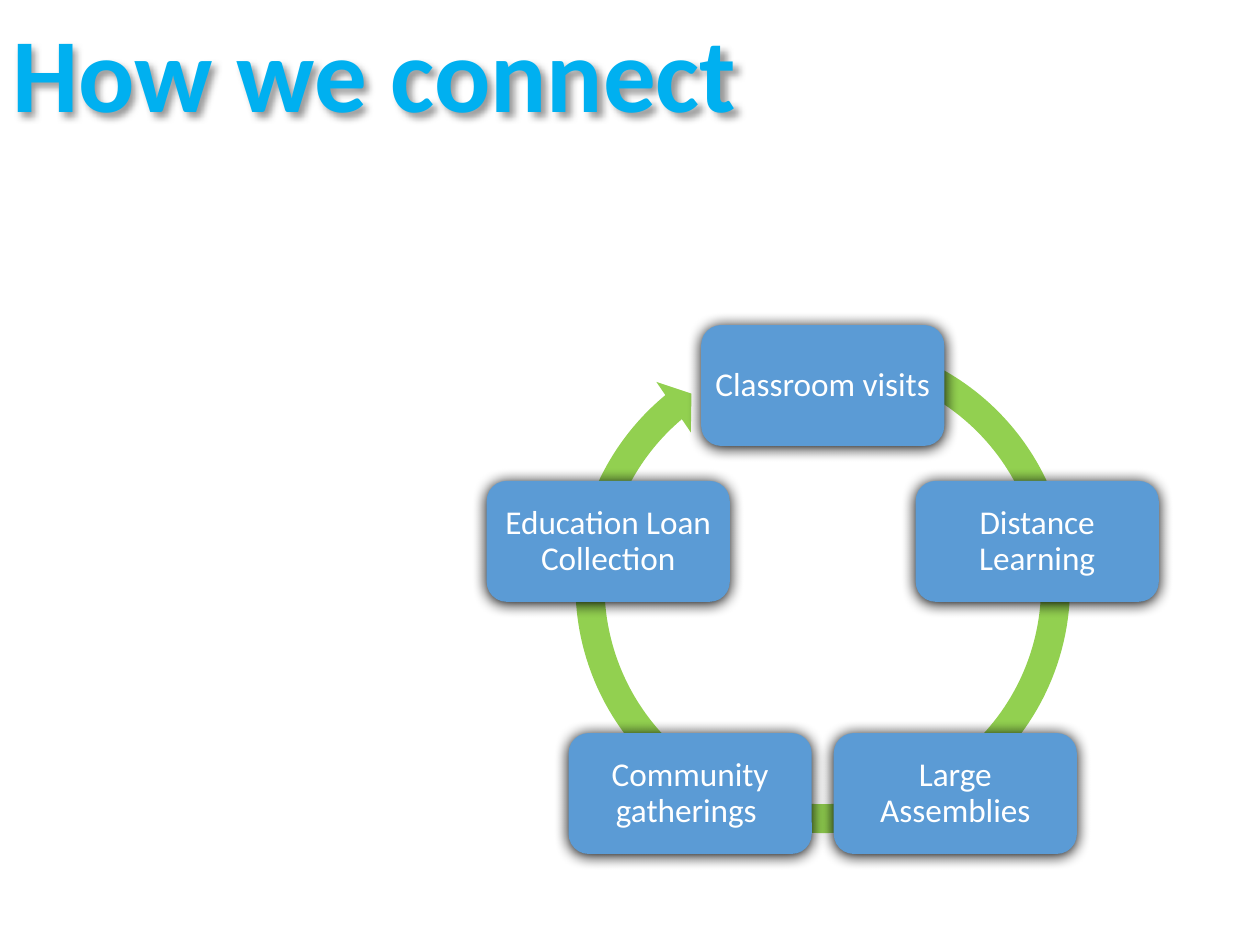
from math import cos, radians, sin

from lxml.etree import SubElement
from pptx import Presentation
from pptx.dml.color import RGBColor as RGB
from pptx.enum.shapes import MSO_SHAPE as Kind
from pptx.enum.text import MSO_ANCHOR as Anchor, PP_ALIGN as Align
from pptx.oxml.ns import qn
from pptx.util import Inches, Pt

# Content
TITLE = "How we connect"
STEPS = [
    "Classroom visits",
    "Distance Learning",
    "Large Assemblies",
    "Community gatherings ",
    "Education Loan Collection",
]

THEME = {
    "font": "Calibri",
    "title": RGB(0x00, 0xB0, 0xF0),
    "box": RGB(0x5B, 0x9B, 0xD5),
    "ring": RGB(0x92, 0xD0, 0x50),
    "text": RGB(0xFF, 0xFF, 0xFF),
    "shadow": "000000",
    "title_size": Pt(60),
    "step_size": Pt(19),
}

# Cycle layout, in inches
MID_X, MID_Y = 6.53, 4.85
RADIUS = 1.79
BOX_W, BOX_H = 1.93, 0.96
RING = 4.18
RING_TOP = 2.56

# Ring arrow: sizes in percent of the ring, angles in degrees
BAND, HEAD = 5.5, 5.8
TIP, END, START = 5.51, 230.15, 289.43


def paint(shape, color):
    shape.shadow.inherit = False
    shape.fill.solid()
    shape.fill.fore_color.rgb = color
    shape.line.fill.background()


def shade(shape, blur, dist, angle, alpha):
    shape.shadow.inherit = False
    effects = shape.element.spPr.find(qn("a:effectLst"))
    outer = SubElement(effects, qn("a:outerShdw"), blurRad=str(Pt(blur)),
                       dist=str(Pt(dist)), dir=str(angle * 60000),
                       algn="ctr", rotWithShape="0")
    color = SubElement(outer, qn("a:srgbClr"), val=THEME["shadow"])
    SubElement(color, qn("a:alpha"), val=str(alpha * 1000))


def write(shape, text, size, color, align, bold=False):
    frame = shape.text_frame
    frame.word_wrap = True
    frame.vertical_anchor = Anchor.MIDDLE
    frame.text = text
    para = frame.paragraphs[0]
    para.alignment = align
    para.line_spacing = 0.9
    font = para.runs[0].font
    font.name, font.size, font.bold = THEME["font"], size, bold
    font.color.rgb = color


def add_ring(shapes):
    ring = shapes.add_shape(Kind.CIRCULAR_ARROW, Inches(MID_X - RING / 2),
                            Inches(RING_TOP), Inches(RING), Inches(RING))
    paint(ring, THEME["ring"])
    # One degree is 60000 units; adjustments count in 100000
    values = [BAND / 100, TIP * 0.6, END * 0.6, START * 0.6, HEAD / 100]
    for i, value in enumerate(values):
        ring.adjustments[i] = value


def add_step(shapes, i, text):
    angle = radians(360 / len(STEPS) * i)
    x = MID_X + RADIUS * sin(angle) - BOX_W / 2
    y = MID_Y - RADIUS * cos(angle) - BOX_H / 2
    box = shapes.add_shape(Kind.ROUNDED_RECTANGLE, Inches(x), Inches(y),
                           Inches(BOX_W), Inches(BOX_H))
    paint(box, THEME["box"])
    shade(box, 8.5, 1, 90, 100)
    write(box, text, THEME["step_size"], THEME["text"], Align.CENTER)
    frame = box.text_frame
    frame.margin_left = frame.margin_right = Inches(0.03)


def main():
    deck = Presentation()
    deck.slide_width, deck.slide_height = Inches(10), Inches(7.5)
    shapes = deck.slides.add_slide(deck.slide_layouts[6]).shapes

    # Cycle
    add_ring(shapes)
    for i, text in enumerate(STEPS):
        add_step(shapes, i, text)

    # Title
    head = shapes.add_textbox(0, 0, Inches(6.94), Inches(1.25))
    write(head, TITLE, THEME["title_size"], THEME["title"], Align.LEFT, True)
    shade(head, 4, 3, 45, 40)

    deck.save("out.pptx")


if __name__ == "__main__":
    main()
